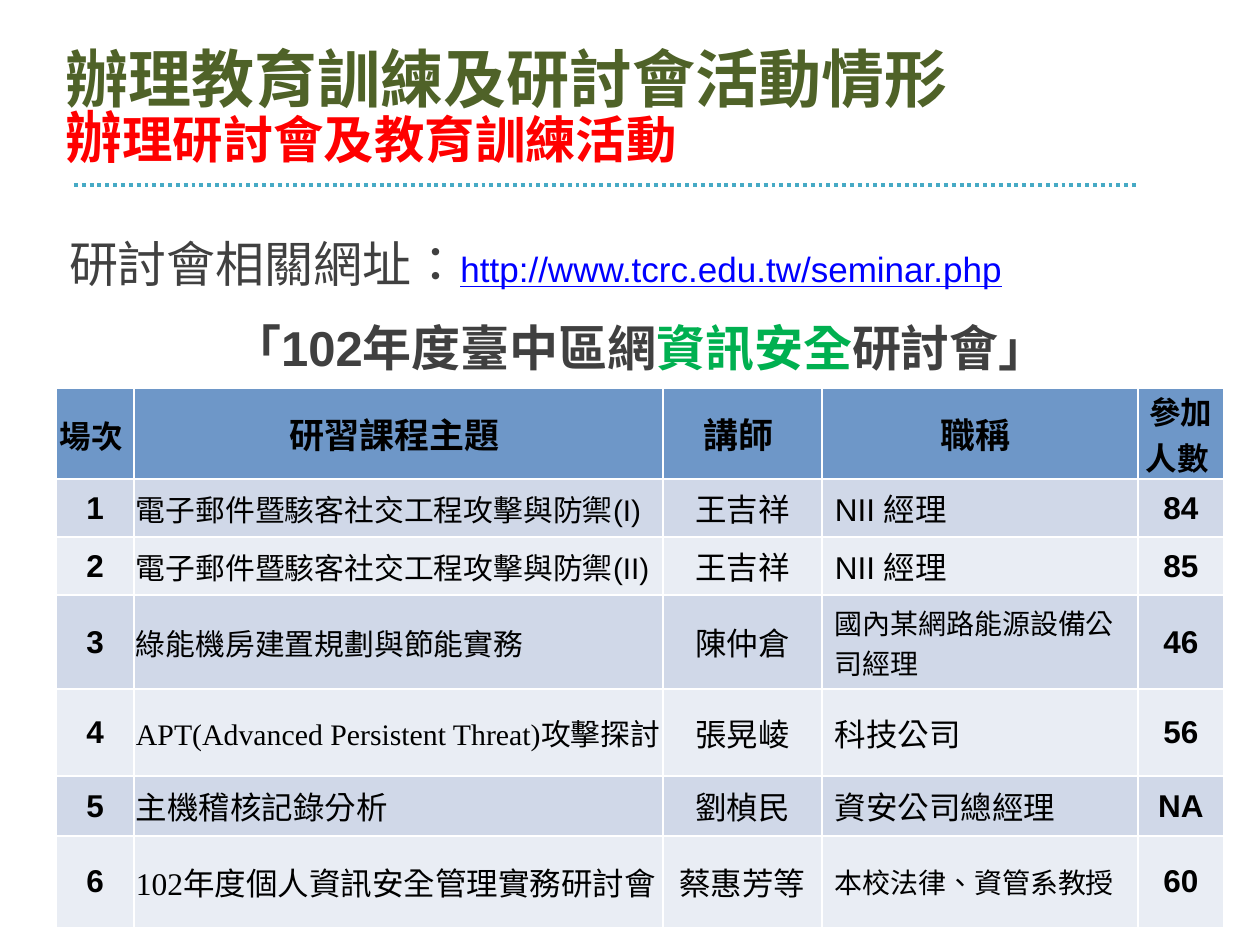
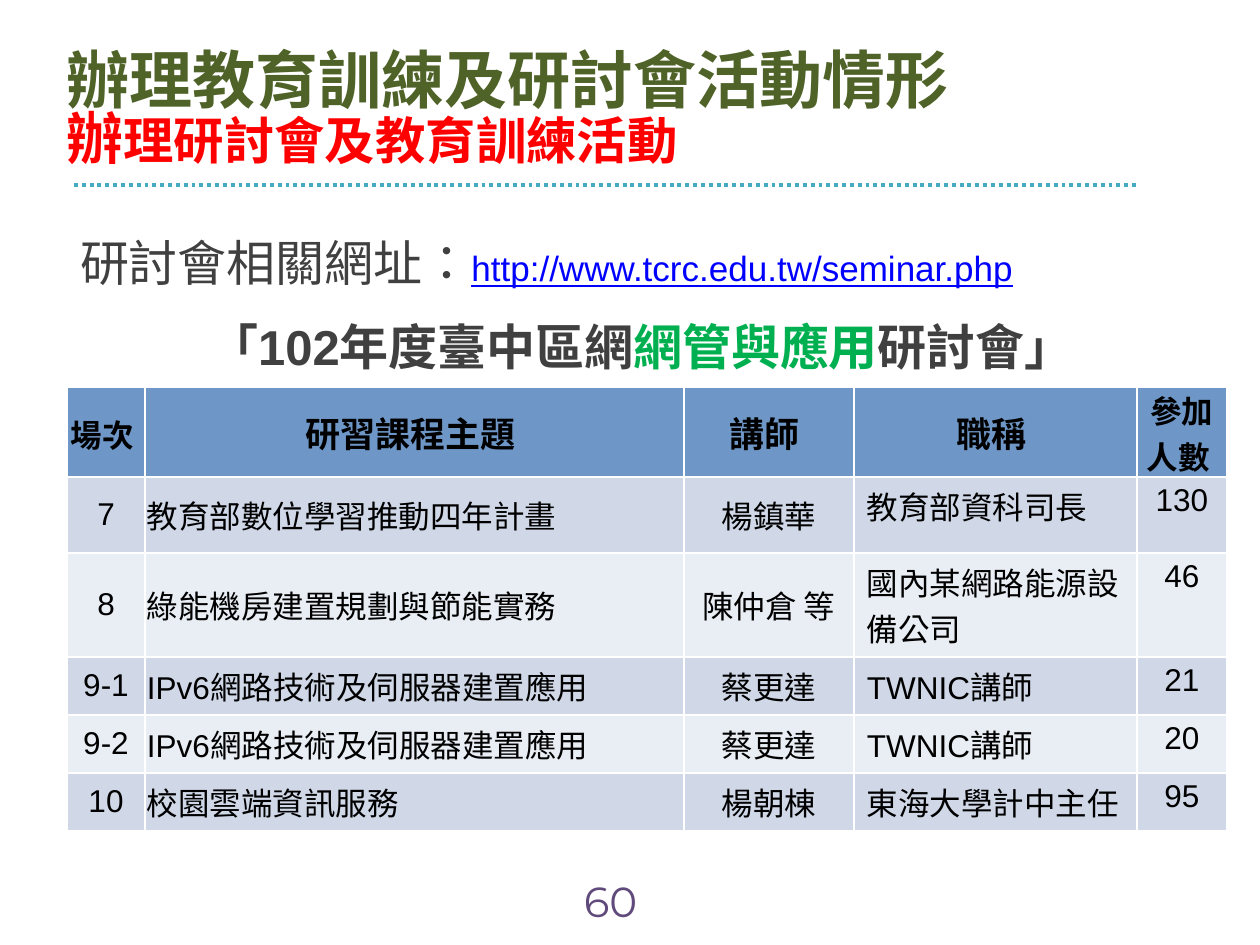
from dataclasses import dataclass

import pptx
import pptx.dml.color
import pptx.enum.dml
import pptx.enum.lang
import pptx.enum.shapes
import pptx.enum.text
import pptx.oxml
import pptx.oxml.ns
import pptx.util
from lxml import etree

PX = 914400 / 126
ALIGN = pptx.enum.text.PP_ALIGN
ANCHOR = pptx.enum.text.MSO_ANCHOR


@dataclass(frozen=True)
class Theme:
    font: str = "Arial"
    serif: str = "Times New Roman"
    number_font: str = "Montserrat"
    title: str = "4F6228"
    subtitle: str = "FF0000"
    rule: str = "46AAC5"
    text: str = "000000"
    intro: str = "404040"
    link: str = "0000FF"
    accent: str = "00B050"
    number: str = "604A7B"
    white: str = "FFFFFF"
    header: str = "4F81BD"
    header_alpha: int = 82
    bands: tuple = ("D0D8E8", "E9EDF4")
    title_size: float = 36
    first_char_size: float = 32.4
    subtitle_size: float = 28.8
    intro_size: float = 28
    header_size: float = 20
    number_size: float = 24
    cell_size: float = 18
    topic_size: float = 17
    small_size: float = 16


T = Theme()


def px(n):
    return pptx.util.Emu(round(n * PX))


def rgb(color):
    return pptx.dml.color.RGBColor.from_string(color)


def add_run(p, text, size=T.cell_size, color=T.text, bold=False, font=T.font, underline=False):
    r = p.add_run()
    r.text = text
    f = r.font
    f.name, f.size, f.bold, f.underline = font, pptx.util.Pt(size), bold, underline
    f.color.rgb = rgb(color)
    f.language_id = pptx.enum.lang.MSO_LANGUAGE_ID.TRADITIONAL_CHINESE


def add_title(s, left, top):
    sp = s.shapes.title
    sp.left, sp.top, sp.width, sp.height = px(left), px(top), px(984), px(137)
    tf = sp.text_frame
    tf.auto_size = pptx.enum.text.MSO_AUTO_SIZE.NONE
    tf.vertical_anchor = ANCHOR.MIDDLE
    p = tf.paragraphs[0]
    p.alignment, p.line_spacing = ALIGN.LEFT, 0.8
    add_run(p, "辦理教育訓練及研討會活動情形", T.title_size, T.title, True)
    p.add_line_break()
    add_run(p, "辦", T.first_char_size, T.subtitle, True)
    add_run(p, "理研討會及教育訓練活動", T.subtitle_size, T.subtitle, True)


def add_rule(s):
    line = s.shapes.add_connector(
        pptx.enum.shapes.MSO_CONNECTOR.STRAIGHT, px(74), px(185), px(1137), px(185))
    line.line.color.rgb = rgb(T.rule)
    line.line.width = pptx.util.Pt(2.25)
    line.line.dash_style = pptx.enum.dml.MSO_LINE.ROUND_DOT
    etree.SubElement(line._element.spPr, pptx.oxml.ns.qn("a:effectLst"))


def add_page_number(s, number):
    tf = s.shapes.add_textbox(px(541), px(869), px(139), px(50)).text_frame
    tf.word_wrap = True
    p = tf.paragraphs[0]
    p.alignment = ALIGN.CENTER
    add_run(p, number, T.number_size, T.number, font=T.number_font)


def set_borders(cell):
    tcPr = cell._tc.get_or_add_tcPr()
    for i, side in enumerate(("lnL", "lnR", "lnT", "lnB")):
        tcPr.insert(i, pptx.oxml.parse_xml(
            f'<a:{side} {pptx.oxml.ns.nsdecls("a")} w="12700"><a:solidFill>'
            f'<a:srgbClr val="{T.white}"/></a:solidFill></a:{side}>'))


def fill_cell(cell, runs, fill, align=ALIGN.CENTER, anchor=ANCHOR.MIDDLE, insets=(13, 6), alpha=None):
    """Write runs, each a dict of add_run arguments; insets are (sides, top and bottom)."""
    set_borders(cell)
    cell.fill.solid()
    cell.fill.fore_color.rgb = rgb(fill)
    if alpha:
        color = cell._tc.tcPr.find(pptx.oxml.ns.qn("a:solidFill"))[0]
        etree.SubElement(color, pptx.oxml.ns.qn("a:alpha"), val=str(alpha * 1000))
    cell.margin_left = cell.margin_right = px(insets[0])
    cell.margin_top = cell.margin_bottom = px(insets[1])
    cell.vertical_anchor = anchor
    p = cell.text_frame.paragraphs[0]
    p.alignment = align
    for run in runs:
        add_run(p, **run)


def fill_intro_rows(table, topic, ending):
    """Fill the two full-width rows: the web address and the seminar name."""
    style = dict(size=T.intro_size, color=T.intro)
    address = [dict(text="研討會相關網址：", **style),
               dict(text="http://www.tcrc.edu.tw/seminar.php", size=T.header_size,
                    color=T.link, underline=True)]
    seminar = [dict(text="「102年度臺中區網", bold=True, **style),
               dict(text=topic, size=T.intro_size, color=T.accent, bold=True),
               dict(text=ending, bold=True, **style)]
    for row, (runs, align) in enumerate([(address, ALIGN.LEFT), (seminar, ALIGN.CENTER)]):
        table.cell(row, 0).merge(table.cell(row, 4))
        fill_cell(table.cell(row, 0), runs, T.white, align, ANCHOR.TOP)


def fill_header_row(table):
    big = dict(size=T.header_size, bold=True)
    headings = [
        [dict(text="場次", bold=True), dict(text=" ", size=T.header_size)],
        [dict(text="研習課程主題 ", **big)],
        [dict(text="講師 ", **big)],
        [dict(text="職稱 ", **big)],
        [dict(text="參加人數 ", bold=True)],
    ]
    for col, runs in enumerate(headings):
        fill_cell(table.cell(2, col), runs, T.header, insets=(0, 0), alpha=T.header_alpha)


def add_seminar_table(s, left, top, widths, heights, topic, ending, sessions,
                      bold_numbers=False, last_anchor=ANCHOR.MIDDLE):
    """A cell of sessions is a string, or a list of run dicts where it differs."""
    table = s.shapes.add_table(len(heights), len(widths), px(left), px(top),
                               px(sum(widths)), px(sum(heights))).table
    for col, width in zip(table.columns, widths):
        col.width = px(width)
    for row, height in zip(table.rows, heights):
        row.height = px(height)
    fill_intro_rows(table, topic, ending)
    fill_header_row(table)
    layouts = [
        dict(),
        dict(align=ALIGN.JUSTIFY, insets=(2, 0)),
        dict(),
        dict(align=ALIGN.LEFT, anchor=last_anchor),
        dict(anchor=last_anchor),
    ]
    for i, session in enumerate(sessions):
        for col, content in enumerate(session):
            bold = bold_numbers and col in (0, 4)
            runs = [dict(text=content, bold=bold)] if isinstance(content, str) else content
            fill_cell(table.cell(i + 3, col), runs, T.bands[i % 2], **layouts[col])


def topic_run(text, **style):
    return dict(text=text, size=T.topic_size, **style)


def small(text):
    return [dict(text=text, size=T.small_size)]


SECURITY_SESSIONS = [
    ("1", [topic_run("電子郵件暨駭客社交工程攻擊與防禦(I)")], "王吉祥", "NII 經理", "84"),
    ("2", [topic_run("電子郵件暨駭客社交工程攻擊與防禦(II)")], "王吉祥", "NII 經理", "85"),
    ("3", [topic_run("綠能機房建置規劃與節能實務")], "陳仲倉",
     small("國內某網路能源設備公司經理"), "46"),
    ("4", [topic_run("APT(Advanced Persistent Threat)", font=T.serif), topic_run("攻擊探討")],
     "張晃崚", "科技公司", "56"),
    ("5", "主機稽核記錄分析", "劉楨民", "資安公司總經理", "NA"),
    ("6", [dict(text="102", font=T.serif), dict(text="年度個人資訊安全管理實務研討會")],
     "蔡惠芳等", small("本校法律、資管系教授"), "60"),
]

NETWORK_SESSIONS = [
    ("7", "教育部數位學習推動四年計畫", "楊鎮華", "教育部資科司長", "130"),
    ("8", "綠能機房建置規劃與節能實務", "陳仲倉 等", "國內某網路能源設備公司", "46"),
    ("9-1", "IPv6網路技術及伺服器建置應用", "蔡更達", "TWNIC講師", "21"),
    ("9-2", "IPv6網路技術及伺服器建置應用", "蔡更達", "TWNIC講師", "20"),
    ("10", "校園雲端資訊服務", "楊朝棟", "東海大學計中主任", "95"),
]


def add_seminar_slide(prs, title_left, title_top):
    s = prs.slides.add_slide(prs.slide_layouts[5])
    add_title(s, title_left, title_top)
    add_rule(s)
    return s


def main():
    prs = pptx.Presentation()
    prs.slide_width, prs.slide_height = px(1260), px(945)

    s = add_seminar_slide(prs, 53, 43)
    add_seminar_table(s, 56, 220, (78, 529, 159, 316, 86),
                      (84, 84, 90, 58, 58, 94, 87, 60, 91),
                      "資訊安全", "研討會」", SECURITY_SESSIONS, bold_numbers=True)

    s = add_seminar_slide(prs, 54, 44)
    add_page_number(s, "60")
    add_seminar_table(s, 67, 219, (78, 539, 170, 283, 90),
                      (84, 84, 90, 76, 104, 58, 58, 58),
                      "網管與應用", "研討會」 ", NETWORK_SESSIONS, last_anchor=ANCHOR.TOP)

    prs.save("out.pptx")


if __name__ == "__main__":
    main()
